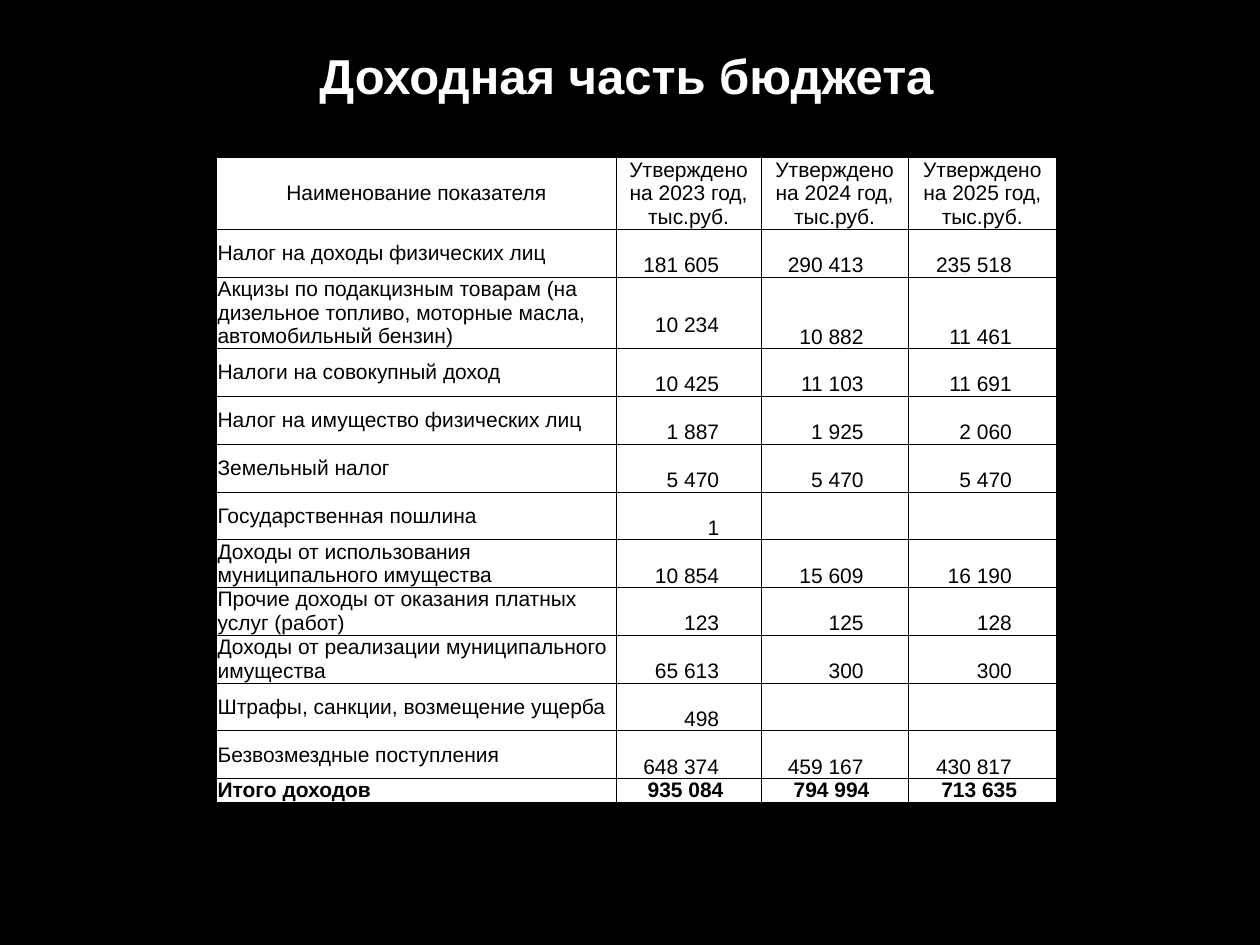
import lxml.etree
import pptx
import pptx.dml.color
import pptx.enum.text
import pptx.oxml.ns
import pptx.util

Pt = pptx.util.Pt
ALIGN = pptx.enum.text.PP_ALIGN
ANCHOR = pptx.enum.text.MSO_ANCHOR

FONT = "Arial"
BLACK, WHITE = "000000", "FFFFFF"
LINE_HEIGHT = 13.66
LINE_PITCH = 13.4
COLUMN_WIDTHS = (228.3, 82.8, 84.1, 84.7)
NUMBER_INDENTS = (24, 25.5, 25.5)

HEADER = ["Наименование показателя"] + [
    f"Утверждено на {year} год, тыс.руб." for year in (2023, 2024, 2025)]

# Lines of text the row has room for, name, amounts by year
INCOME = [
    (2, "Налог на доходы физических лиц", "181 605", "290 413", "235 518"),
    (3, "Акцизы по подакцизным товарам (на дизельное топливо, моторные масла, "
        "автомобильный бензин)", "10 234", "10 882", "11 461"),
    (2, "Налоги на совокупный доход", "10 425", "11 103", "11 691"),
    (2, "Налог на имущество физических лиц", "1 887", "1 925", "2 060"),
    (2, "Земельный налог", "5 470", "5 470", "5 470"),
    (2, "Государственная пошлина", "1", "", ""),
    (2, "Доходы от использования муниципального имущества",
     "10 854", "15 609", "16 190"),
    (2, "Прочие доходы от оказания платных услуг (работ)", "123", "125", "128"),
    (2, "Доходы от реализации муниципального имущества", "65 613", "300", "300"),
    (2, "Штрафы, санкции, возмещение ущерба", "498", "", ""),
    (2, "Безвозмездные поступления", "648 374", "459 167", "430 817"),
]
TOTAL = ["Итого доходов", "935 084", "794 994", "713 635"]


def rgb(color):
    return pptx.dml.color.RGBColor.from_string(color)


def format_text(tf, size, color, align, bold=False):
    p = tf.paragraphs[0]
    p.alignment = align
    for font in [p.font] + [r.font for r in p.runs]:
        font.name = FONT
        font.size = Pt(size)
        font.bold = bold
        font.color.rgb = rgb(color)


def add_title(s, text):
    sp = s.shapes.add_textbox(Pt(34), Pt(17), Pt(648), Pt(52))
    tf = sp.text_frame
    tf.word_wrap = True
    tf.vertical_anchor = ANCHOR.MIDDLE
    tf.text = text
    format_text(tf, 28, WHITE, ALIGN.CENTER, bold=True)


def set_borders(cell, color, width):
    tc_pr = cell._tc.get_or_add_tcPr()
    for side in ("lnL", "lnR", "lnT", "lnB"):
        ln = lxml.etree.SubElement(
            tc_pr, pptx.oxml.ns.qn(f"a:{side}"), w=str(Pt(width)))
        fill = lxml.etree.SubElement(ln, pptx.oxml.ns.qn("a:solidFill"))
        lxml.etree.SubElement(fill, pptx.oxml.ns.qn("a:srgbClr"), val=color)


def fill_cell(cell, text, align, anchor, bold=False, right=0.5, bottom=0):
    cell.text = text
    format_text(cell.text_frame, 12, BLACK, align, bold)
    cell.text_frame.paragraphs[0].line_spacing = Pt(LINE_PITCH)
    cell.vertical_anchor = anchor
    cell.margin_left, cell.margin_top = Pt(0.5), Pt(0)
    cell.margin_right, cell.margin_bottom = Pt(right), Pt(bottom)
    set_borders(cell, BLACK, 0.5)
    cell.fill.solid()
    cell.fill.fore_color.rgb = rgb(WHITE)


def add_income_table(s):
    line_counts = [3] + [row[0] for row in INCOME] + [1]
    frame = s.shapes.add_table(
        len(line_counts), len(COLUMN_WIDTHS), Pt(123.84), Pt(90),
        Pt(sum(COLUMN_WIDTHS)), Pt(sum(line_counts) * LINE_HEIGHT))
    table = frame.table
    table.first_row = table.horz_banding = False
    for column, width in zip(table.columns, COLUMN_WIDTHS):
        column.width = Pt(width)
    for row, count in zip(table.rows, line_counts):
        row.height = Pt(count * LINE_HEIGHT)

    # Header row
    for c, text in enumerate(HEADER):
        fill_cell(table.cell(0, c), text, ALIGN.CENTER, ANCHOR.MIDDLE)

    # Income rows: amounts sit at the bottom, set in from the right
    for r, (count, name, *amounts) in enumerate(INCOME, start=1):
        fill_cell(table.cell(r, 0), name, ALIGN.LEFT, ANCHOR.MIDDLE)
        for c, (amount, indent) in enumerate(zip(amounts, NUMBER_INDENTS), start=1):
            raised = count == 3 and c == 1
            fill_cell(table.cell(r, c), amount, ALIGN.RIGHT, ANCHOR.BOTTOM,
                      right=indent, bottom=LINE_HEIGHT / 2 if raised else 0)

    # Total row
    for c, text in enumerate(TOTAL):
        fill_cell(table.cell(len(INCOME) + 1, c), text,
                  ALIGN.CENTER if c else ALIGN.JUSTIFY, ANCHOR.TOP,
                  bold=True, right=4)


def main():
    prs = pptx.Presentation()
    prs.slide_width, prs.slide_height = Pt(720), Pt(540)
    s = prs.slides.add_slide(prs.slide_layouts[6])
    s.background.fill.solid()
    s.background.fill.fore_color.rgb = rgb(BLACK)
    add_title(s, "Доходная часть бюджета")
    add_income_table(s)
    prs.save("out.pptx")


if __name__ == "__main__":
    main()
